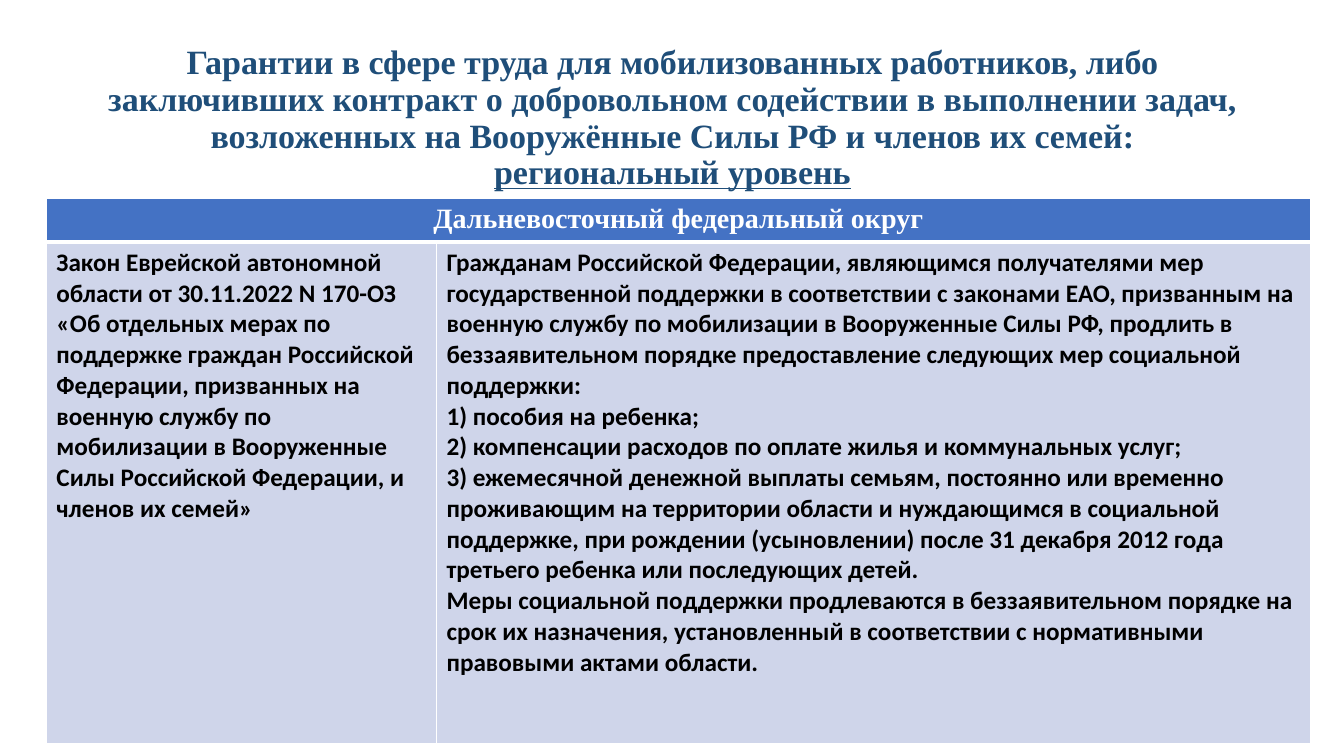
from pptx import Presentation
from pptx.dml.color import RGBColor
from pptx.enum.text import MSO_ANCHOR, PP_ALIGN
from pptx.util import Inches, Pt
from lxml import etree

# Content
TITLE = [
    ("Гарантии в сфере труда для мобилизованных работников, либо заключивших контракт "
     "о добровольном содействии в выполнении задач, возложенных на Вооружённые Силы РФ "
     "и членов их семей: ", False),
    ("региональный уровень", True),
]
DISTRICT = "Дальневосточный федеральный округ"
LAW = [
    "Закон Еврейской автономной области от 30.11.2022 N 170-ОЗ",
    "«Об отдельных мерах по поддержке граждан Российской Федерации, призванных на военную "
    "службу по мобилизации в Вооруженные Силы Российской Федерации, и членов их семей»",
]
MEASURES = [
    "Гражданам Российской Федерации, являющимся получателями мер государственной поддержки "
    "в соответствии с законами ЕАО, призванным на военную службу по мобилизации в Вооруженные "
    "Силы РФ, продлить в беззаявительном порядке предоставление следующих мер социальной поддержки:",
    "1) пособия на ребенка;",
    "2) компенсации расходов по оплате жилья и коммунальных услуг;",
    "3) ежемесячной денежной выплаты семьям, постоянно или временно проживающим на территории "
    "области и нуждающимся в социальной поддержке, при рождении (усыновлении) после 31 декабря "
    "2012 года третьего ребенка или последующих детей.",
    "Меры социальной поддержки продлеваются в беззаявительном порядке на срок их назначения, "
    "установленный в соответствии с нормативными правовыми актами области.",
]

# Formats and grid
NAVY, BLUE, PALE = (RGBColor.from_string(c) for c in ("1F4E79", "4472C4", "CFD5EA"))
WHITE, BLACK = RGBColor(255, 255, 255), RGBColor(0, 0, 0)
TITLE_FONT = {"name": "Times New Roman", "size": Pt(24.3), "bold": True}
HEAD_FONT = {"name": "Times New Roman", "size": Pt(20), "bold": True}
BODY_FONT = {"name": "Calibri", "size": Pt(18), "bold": True}
COLS, ROWS = (3.87, 8.67), (0.43, 4.97)
NS = "http://schemas.openxmlformats.org/drawingml/2006/main"


def format_font(font, values, color):
    for name, value in values.items():
        setattr(font, name, value)
    font.color.rgb = color


def fill_cell(cell, lines, values, color, fill, align, bottom=1):
    cell.fill.solid()
    cell.fill.fore_color.rgb = fill
    tf = cell.text_frame
    tf.text = "\n".join(lines)
    for p in tf.paragraphs:
        p.alignment = align
        format_font(p.runs[0].font, values, color)
    # Borders precede the fill in the cell properties
    widths = {"lnL": 1, "lnR": 1, "lnT": 1, "lnB": bottom}
    for i, (side, width) in enumerate(widths.items()):
        ln = etree.Element(f"{{{NS}}}{side}", w=str(Pt(width)))
        solid = etree.SubElement(ln, f"{{{NS}}}solidFill")
        etree.SubElement(solid, f"{{{NS}}}srgbClr", val=str(WHITE))
        cell._tc.get_or_add_tcPr().insert(i, ln)


prs = Presentation()
prs.slide_width, prs.slide_height = Inches(13.33), Inches(7.5)
slide = prs.slides.add_slide(prs.slide_layouts[6])

# Title
box = slide.shapes.add_textbox(Inches(0.92), Inches(0.4), Inches(11.5), Inches(1.45))
tf = box.text_frame
tf.word_wrap = True
tf.vertical_anchor = MSO_ANCHOR.TOP
p = tf.paragraphs[0]
p.alignment, p.line_spacing = PP_ALIGN.CENTER, 0.9
for text, underline in TITLE:
    r = p.add_run()
    r.text = text
    format_font(r.font, TITLE_FONT, NAVY)
    r.font.underline = underline

# Table
frame = slide.shapes.add_table(len(ROWS), len(COLS), Inches(0.46), Inches(1.97),
                               Inches(sum(COLS)), Inches(sum(ROWS)))
table = frame.table
for col, width in zip(table.columns, COLS):
    col.width = Inches(width)
for row, height in zip(table.rows, ROWS):
    row.height = Inches(height)
table.cell(0, 0).merge(table.cell(0, 1))
fill_cell(table.cell(0, 0), [DISTRICT], HEAD_FONT, WHITE, BLUE, PP_ALIGN.CENTER, bottom=3)
for i, lines in enumerate((LAW, MEASURES)):
    fill_cell(table.cell(1, i), lines, BODY_FONT, BLACK, PALE, PP_ALIGN.LEFT)

prs.save("out.pptx")
